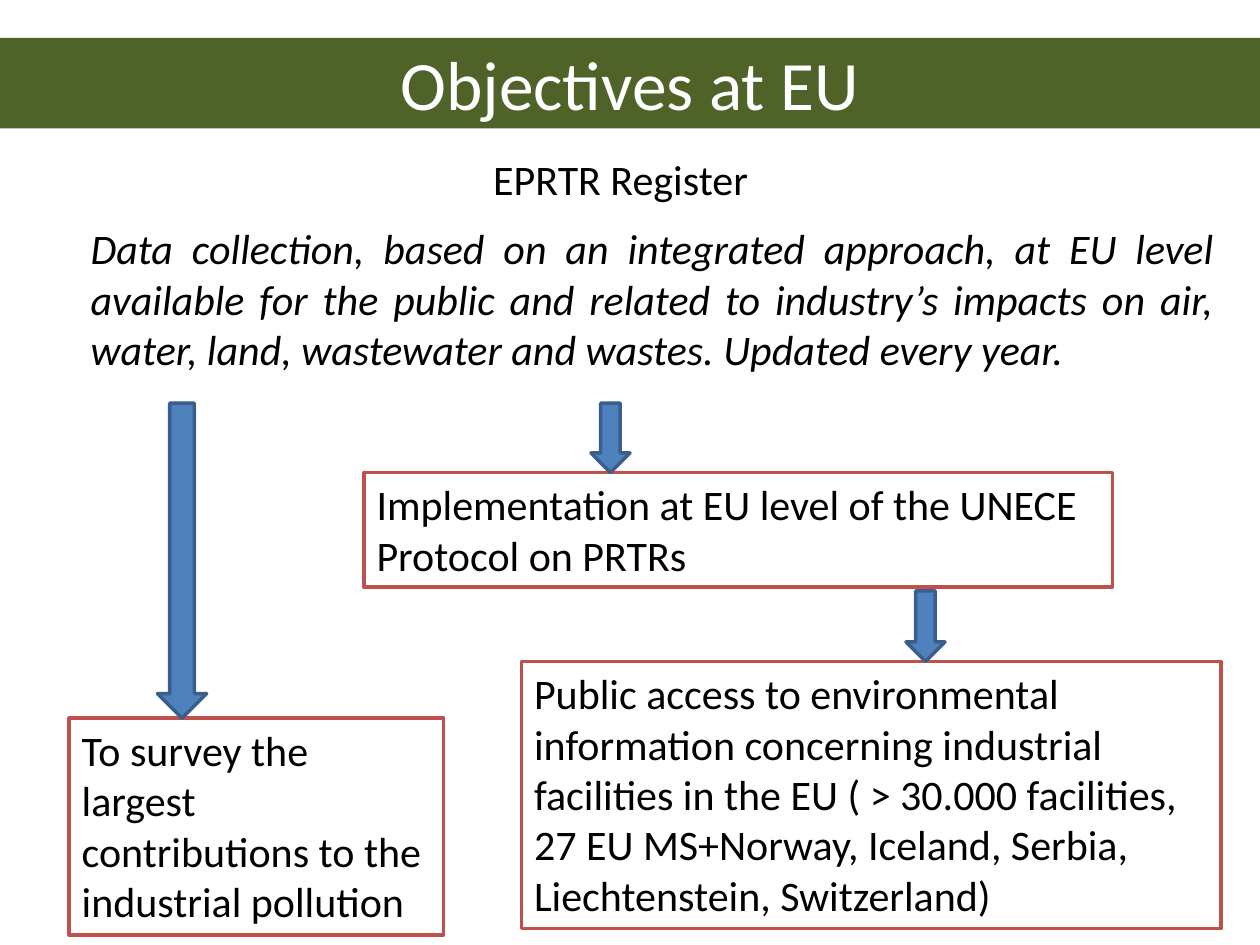
from pptx import Presentation
from pptx.dml.color import RGBColor
from pptx.enum.shapes import MSO_SHAPE
from pptx.enum.text import MSO_ANCHOR, PP_ALIGN
from pptx.util import Inches, Pt

TITLE = "Objectives at EU"
SUBTITLE = "EPRTR Register"
SUMMARY = (
    "Data collection, based on an integrated approach, at EU level "
    "available for the public and related to industry’s impacts on air, "
    "water, land, wastewater and wastes. Updated every year."
)
OBJECTIVES = [
    {
        "text": "Implementation at EU level of the UNECE Protocol on PRTRs",
        "box": (2.89, 3.75, 5.94, 0.91),
        "arrow": (4.69, 3.2, 0.31),
    },
    {
        "text": "Public access to environmental information concerning industrial "
                "facilities in the EU ( > 30.000 facilities, 27 EU MS+Norway, "
                "Iceland, Serbia, Liechtenstein, Switzerland)",
        "box": (4.14, 5.25, 5.55, 2.12),
        "arrow": (7.19, 4.69, 0.31),
    },
    {
        "text": "To survey the largest contributions to the industrial pollution",
        "box": (0.55, 5.7, 2.97, 1.72),
        "arrow": (1.25, 3.2, 0.39),
    },
]
GREEN, WHITE, BLACK = "4F6228", "FFFFFF", "000000"
RED, BLUE, DARK_BLUE = "C0504D", "4F81BD", "3A5F8C"


def color(value):
    """Turn a hex string into a colour."""
    return RGBColor.from_string(value)


def add_block(page, kind, place, fill, line=None):
    """Add a filled preset shape with an optional outline."""
    block = page.shapes.add_shape(kind, *map(Inches, place))
    block.shadow.inherit = False
    block.fill.solid()
    block.fill.fore_color.rgb = color(fill)
    if line:
        block.line.color.rgb = color(line)
        block.line.width = Pt(2)
    else:
        block.line.fill.background()
    return block


def write(box, text, align, size=24, ink=BLACK, anchor=MSO_ANCHOR.TOP):
    """Fill a box with one wrapped paragraph and return it."""
    frame = box.text_frame
    frame.word_wrap = True
    frame.vertical_anchor = anchor
    para = frame.paragraphs[0]
    para.text = text
    para.alignment = align
    para.font.name = "Calibri"
    para.font.size = Pt(size)
    para.font.color.rgb = color(ink)
    return para


def add_text(page, place, text, align):
    """Add a text box and return its paragraph."""
    return write(page.shapes.add_textbox(*map(Inches, place)), text, align)


def add_objective(page, text, box, arrow):
    """Add an outlined box and the arrow that ends on its top edge."""
    block = add_block(page, MSO_SHAPE.RECTANGLE, box, WHITE, RED)
    write(block, text, PP_ALIGN.LEFT)
    left, top, width = arrow
    place = (left, top, width, box[1] - top)
    add_block(page, MSO_SHAPE.DOWN_ARROW, place, BLUE, DARK_BLUE)


def main():
    """Build and save the slide."""
    deck = Presentation()
    deck.slide_width, deck.slide_height = Inches(10), Inches(7.5)
    page = deck.slides.add_slide(deck.slide_layouts[6])

    banner = add_block(page, MSO_SHAPE.RECTANGLE, (0, 0.3, 10, 0.72), GREEN)
    write(banner, TITLE, PP_ALIGN.CENTER, 39.6, WHITE, MSO_ANCHOR.MIDDLE)
    add_text(page, (0.47, 1.17, 8.91, 0.5), SUBTITLE, PP_ALIGN.CENTER)
    summary = add_text(page, (0.62, 1.72, 9.11, 1.45), SUMMARY, PP_ALIGN.JUSTIFY)
    summary.font.italic = True
    summary.space_before = Pt(4.8)

    for objective in OBJECTIVES:
        add_objective(page, **objective)

    deck.save("out.pptx")


if __name__ == "__main__":
    main()
